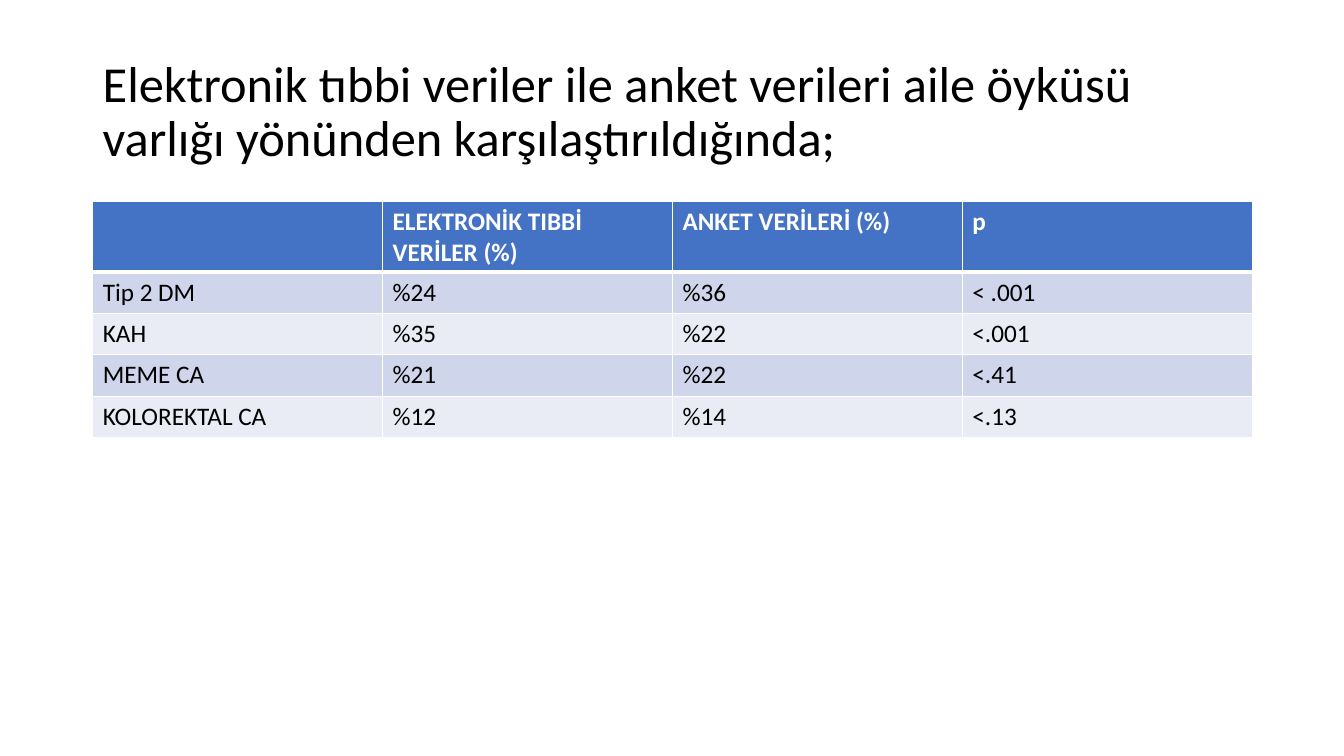
"""Build a slide comparing family history rates in records and surveys."""
from dataclasses import dataclass

from lxml.etree import SubElement
from pptx import Presentation
from pptx.dml.color import RGBColor
from pptx.enum.text import MSO_ANCHOR
from pptx.oxml.ns import qn
from pptx.util import Inches, Pt

MIDDLE = MSO_ANCHOR.MIDDLE

TITLE = ("Elektronik tıbbi veriler ile anket verileri aile öyküsü "
         "varlığı yönünden karşılaştırıldığında;")
ROWS = [
    ("", "ELEKTRONİK TIBBİ VERİLER (%)", "ANKET VERİLERİ (%)", "p"),
    ("Tip 2 DM", "%24", "%36", "< .001"),
    ("KAH", "%35", "%22", "<.001"),
    ("MEME CA", "%21", "%22", "<.41"),
    ("KOLOREKTAL CA", "%12", "%14", "<.13"),
]


@dataclass(frozen=True)
class Theme:
    font: str = "Calibri"
    title: int = 36
    body: int = 18
    ink: str = "000000"
    white: str = "FFFFFF"
    head: str = "4472C4"
    bands: tuple = ("CFD5EA", "E9EBF5")
    rule: int = 1
    thick: int = 3


THEME = Theme()
WIDE, HIGH = Inches(13.33), Inches(7.5)
LEFT, SPAN = Inches(0.92), Inches(11.5)
TOP, HEAD, ROW = Inches(2), Inches(0.7), Inches(0.41)


def style(para, size, color, bold=False):
    font = para.font
    font.name, font.size, font.bold = THEME.font, Pt(size), bold
    font.color.rgb = RGBColor.from_string(color)


def border(cell, base):
    props = cell._tc.get_or_add_tcPr()
    for side, width in (("L", THEME.rule), ("R", THEME.rule),
                        ("T", THEME.rule), ("B", base)):
        line = SubElement(props, qn(f"a:ln{side}"), w=str(Pt(width)))
        fill = SubElement(line, qn("a:solidFill"))
        SubElement(fill, qn("a:srgbClr"), val=THEME.white)


def add_title(slide):
    frame = slide.shapes.add_textbox(
        LEFT, Inches(0.4), SPAN, Inches(1.45)).text_frame
    frame.word_wrap = True
    frame.vertical_anchor = MIDDLE
    para = frame.paragraphs[0]
    para.text = TITLE
    para.line_spacing = 0.9
    style(para, THEME.title, THEME.ink)


def add_grid(slide):
    count = len(ROWS)
    table = slide.shapes.add_table(
        count, len(ROWS[0]), LEFT, TOP, SPAN,
        HEAD + ROW * (count - 1)).table
    for r, texts in enumerate(ROWS):
        top = r == 0
        table.rows[r].height = HEAD if top else ROW
        shade = THEME.head if top else THEME.bands[(r - 1) % 2]
        for c, text in enumerate(texts):
            cell = table.cell(r, c)
            border(cell, THEME.thick if top else THEME.rule)
            cell.fill.solid()
            cell.fill.fore_color.rgb = RGBColor.from_string(shade)
            cell.text = text
            style(cell.text_frame.paragraphs[0], THEME.body,
                  THEME.white if top else THEME.ink, top)


def main():
    deck = Presentation()
    deck.slide_width, deck.slide_height = WIDE, HIGH
    slide = deck.slides.add_slide(deck.slide_layouts[6])
    add_title(slide)
    add_grid(slide)
    deck.save("out.pptx")


if __name__ == "__main__":
    main()
